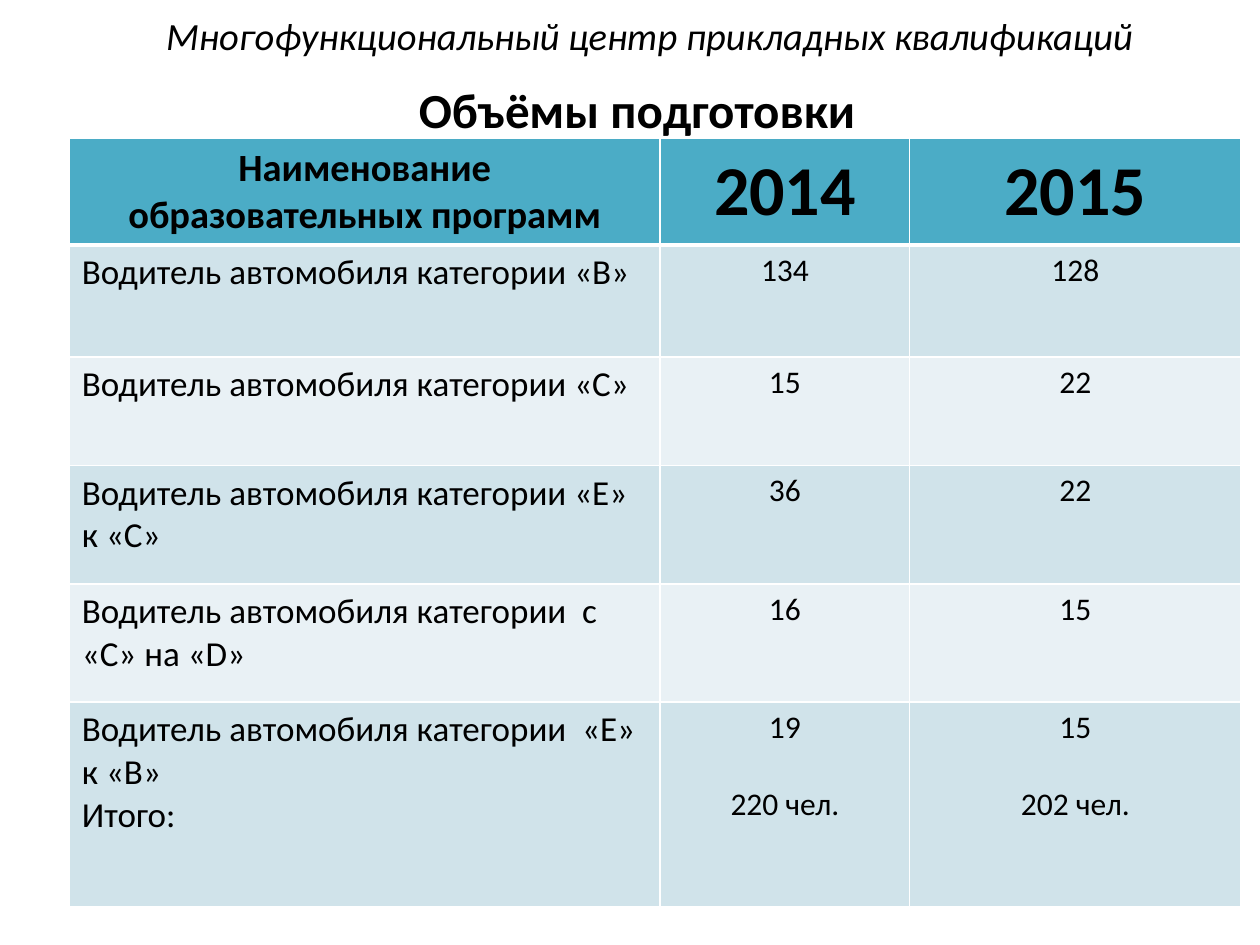
from lxml.etree import SubElement
from pptx import Presentation
from pptx.dml.color import RGBColor
from pptx.enum.text import MSO_ANCHOR, PP_ALIGN
from pptx.oxml.ns import qn
from pptx.util import Inches, Pt

HEADER = ["Наименование\nобразовательных программ", "2014", "2015"]
PROGRAMS = [
    ["Водитель автомобиля категории «В»", "134", "128"],
    ["Водитель автомобиля категории «С»", "15", "22"],
    ["Водитель автомобиля категории «Е» к «С»", "36", "22"],
    ["Водитель автомобиля категории  с «С» на «D»", "16", "15"],
    ["Водитель автомобиля категории  «Е» к «В»\nИтого:", "19\n220 чел.", "15\n202 чел."],
]
COLUMN_WIDTHS = [4.69, 1.98, 2.63]
ROW_HEIGHTS = [0.82, 0.89, 0.86, 0.94, 0.94, 1.62]


def color(value):
    return RGBColor.from_string(value)


class SlideBuilder:
    """Holds the style and the current slide and adds each kind of element."""

    font_name = "Calibri"
    text_color = "000000"
    border_color = "FFFFFF"
    header_fill = "4BACC6"
    band_fills = ["D0E3EA", "E9F1F5"]

    def __init__(self, deck):
        self.slide = deck.slides.add_slide(deck.slide_layouts[5])

    def set_text(self, frame, text, size, align=PP_ALIGN.CENTER, bold=False, italic=False, gap=0):
        frame.text = text
        for index, para in enumerate(frame.paragraphs):
            para.alignment = align
            if index and gap:
                para.space_before = Pt(gap)
            for span in para.runs:
                span.font.name = self.font_name
                span.font.size = Pt(size)
                span.font.bold = bold
                span.font.italic = italic
                span.font.color.rgb = color(self.text_color)

    def title(self, text, left, top, width, height, size):
        box = self.slide.shapes.title
        box.left, box.top, box.width, box.height = map(Inches, (left, top, width, height))
        box.text_frame.vertical_anchor = MSO_ANCHOR.MIDDLE
        self.set_text(box.text_frame, text, size, bold=True)

    def text(self, text, left, top, width, height, size):
        box = self.slide.shapes.add_textbox(*map(Inches, (left, top, width, height)))
        box.text_frame.word_wrap = True
        self.set_text(box.text_frame, text, size, italic=True)

    def border(self, cell, side, width):
        line = SubElement(cell._tc.get_or_add_tcPr(), qn(f"a:ln{side}"), w=str(Pt(width)))
        fill = SubElement(line, qn("a:solidFill"))
        SubElement(fill, qn("a:srgbClr"), val=self.border_color)

    def cell(self, cell, text, row, column):
        is_header = row == 0
        for side in "LRTB":
            on_header_edge = (row, side) in [(0, "B"), (1, "T")]
            self.border(cell, side, 3 if on_header_edge else 1)
        cell.fill.solid()
        cell.fill.fore_color.rgb = color(
            self.header_fill if is_header else self.band_fills[(row - 1) % 2])
        if is_header:
            cell.vertical_anchor = MSO_ANCHOR.MIDDLE
            self.set_text(cell.text_frame, text, 40 if column else 22, bold=True)
        elif column:
            self.set_text(cell.text_frame, text, 18, gap=22)
        else:
            self.set_text(cell.text_frame, text, 20, align=PP_ALIGN.LEFT)

    def table(self, rows, left, top, widths, heights):
        frame = self.slide.shapes.add_table(
            len(rows), len(widths), Inches(left), Inches(top),
            Inches(sum(widths)), Inches(sum(heights)))
        table = frame.table
        for column, width in zip(table.columns, widths):
            column.width = Inches(width)
        for row, height in zip(table.rows, heights):
            row.height = Inches(height)
        for row, texts in enumerate(rows):
            for column, text in enumerate(texts):
                self.cell(table.cell(row, column), text, row, column)


def main():
    deck = Presentation()
    deck.slide_width, deck.slide_height = Inches(10), Inches(7.5)
    page = SlideBuilder(deck)
    page.table([HEADER] + PROGRAMS, 0.55, 1.1, COLUMN_WIDTHS, ROW_HEIGHTS)
    page.text("Многофункциональный центр прикладных квалификаций", 0.31, 0.05, 9.69, 0.52, 22)
    page.title("Объёмы подготовки", 0.39, 0.55, 9.33, 0.63, 28)
    deck.save("out.pptx")


if __name__ == "__main__":
    main()
